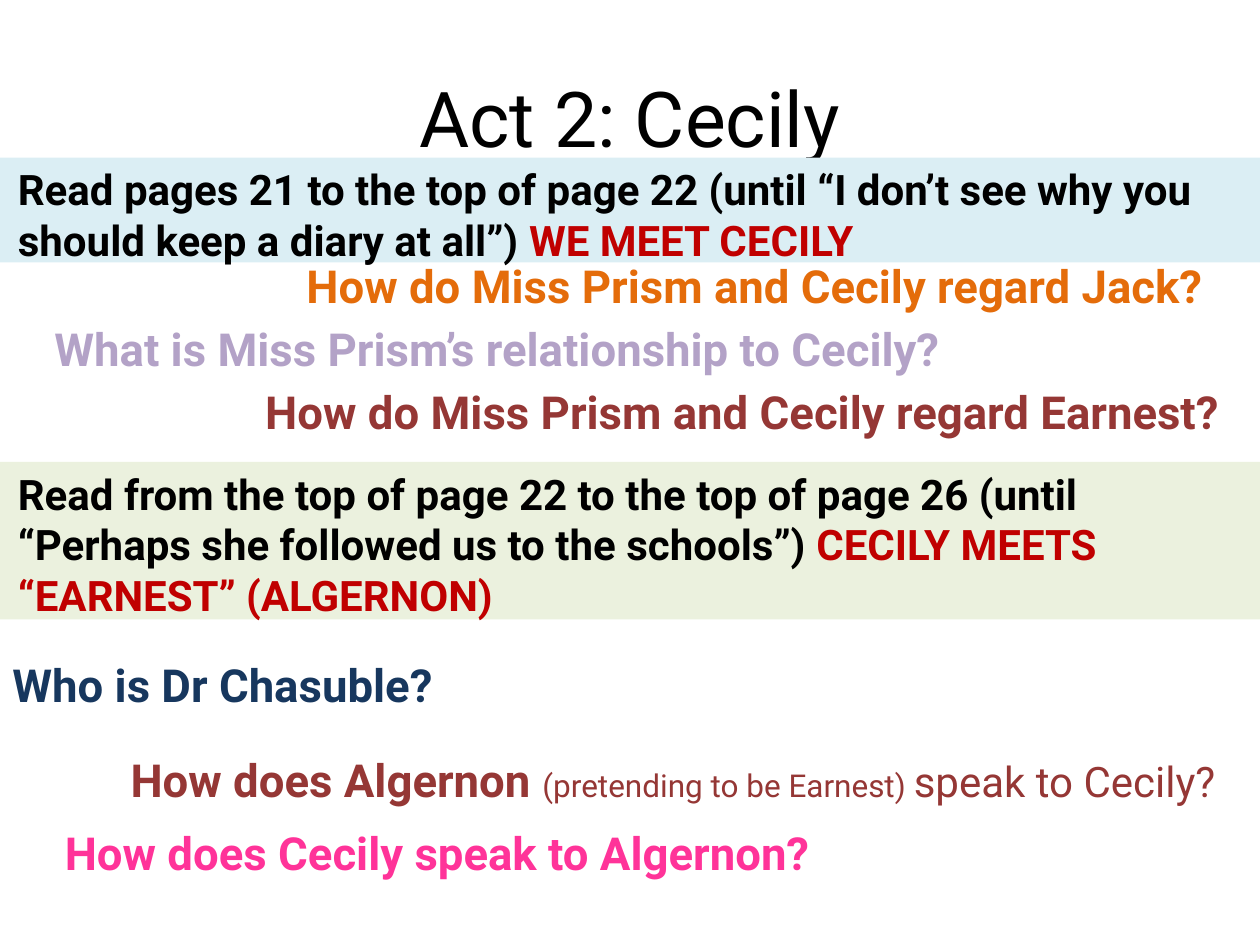
from pptx import Presentation
from pptx.dml.color import RGBColor
from pptx.enum.shapes import MSO_SHAPE
from pptx.enum.text import MSO_ANCHOR, MSO_AUTO_SIZE, PP_ALIGN
from pptx.util import Pt

FONT = "Roboto"
COLOURS = {
    "black": "000000", "red": "C00000", "orange": "E46C0A", "lilac": "B3A2C7",
    "brown": "953735", "navy": "17375E", "pink": "FF3399",
    "pale blue": "DBEEF4", "pale green": "EBF1DE",
}

# Content: a run is (text, size, bold, colour)
TITLE = [("Act 2: Cecily", 44, False, "black")]

# Reading tasks: top, height, fill, runs
READINGS = [
    (90, 60, "pale blue", [
        ("Read pages 21 to the top of page 22 (until “I don’t see why you "
         "should keep a diary at all”) ", 24, True, "black"),
        ("WE MEET CECILY", 24, True, "red")]),
    (264, 90, "pale green", [
        ("Read from the top of page 22 to the top of page 26 (until "
         "“Perhaps she followed us to the schools”) ", 24, True, "black"),
        ("CECILY MEETS “EARNEST” (ALGERNON)", 24, True, "red")]),
]

# Questions: left, top, width, runs
QUESTIONS = [
    (168, 144, 538.5, [("How do Miss Prism and Cecily regard Jack?", 26, True, "orange")]),
    (24, 180, 540, [("What is Miss Prism’s relationship to Cecily?", 26, True, "lilac")]),
    (144.5, 216, 575.5, [("How do Miss Prism and Cecily regard Earnest?", 26, True, "brown")]),
    (0, 372, 261.5, [("Who is Dr Chasuble?", 26, True, "navy")]),
    (67.5, 426, 652.5, [
        ("How does Algernon ", 26, True, "brown"),
        ("(pretending to be Earnest) ", 18, False, "brown"),
        ("speak to Cecily?", 24, False, "brown")]),
    (30, 468, 453.5, [("How does Cecily speak to Algernon?", 26, True, "pink")]),
]
QUESTION_HEIGHT = 39
BAND_LEFT, BAND_WIDTH, BAND_INSET = -24, 744, 34.2


def colour(name):
    return RGBColor.from_string(COLOURS[name])


def write(shape, runs, alignment=PP_ALIGN.LEFT, anchor=MSO_ANCHOR.TOP, wrap=True):
    frame = shape.text_frame
    frame.word_wrap = wrap
    frame.vertical_anchor = anchor
    paragraph = frame.paragraphs[0]
    paragraph.alignment = alignment
    for text, size, bold, name in runs:
        run = paragraph.add_run()
        run.text = text
        run.font.name = FONT
        run.font.size = Pt(size)
        run.font.bold = bold
        run.font.color.rgb = colour(name)


presentation = Presentation()
presentation.slide_width, presentation.slide_height = Pt(720), Pt(540)
slide = presentation.slides.add_slide(presentation.slide_layouts[6])

# Title
title = slide.shapes.add_textbox(Pt(36), Pt(21.6), Pt(648), Pt(90))
write(title, TITLE, PP_ALIGN.CENTER, MSO_ANCHOR.MIDDLE)

# Reading bands
for top, height, fill, runs in READINGS:
    band = slide.shapes.add_shape(
        MSO_SHAPE.RECTANGLE, Pt(BAND_LEFT), Pt(top), Pt(BAND_WIDTH), Pt(height))
    band.shadow.inherit = False
    band.fill.solid()
    band.fill.fore_color.rgb = colour(fill)
    band.line.fill.background()
    band.text_frame.margin_left = Pt(BAND_INSET)
    write(band, runs)

# Questions
for left, top, width, runs in QUESTIONS:
    question = slide.shapes.add_textbox(Pt(left), Pt(top), Pt(width), Pt(QUESTION_HEIGHT))
    write(question, runs, wrap=False)
    question.text_frame.auto_size = MSO_AUTO_SIZE.SHAPE_TO_FIT_TEXT

presentation.save("out.pptx")
